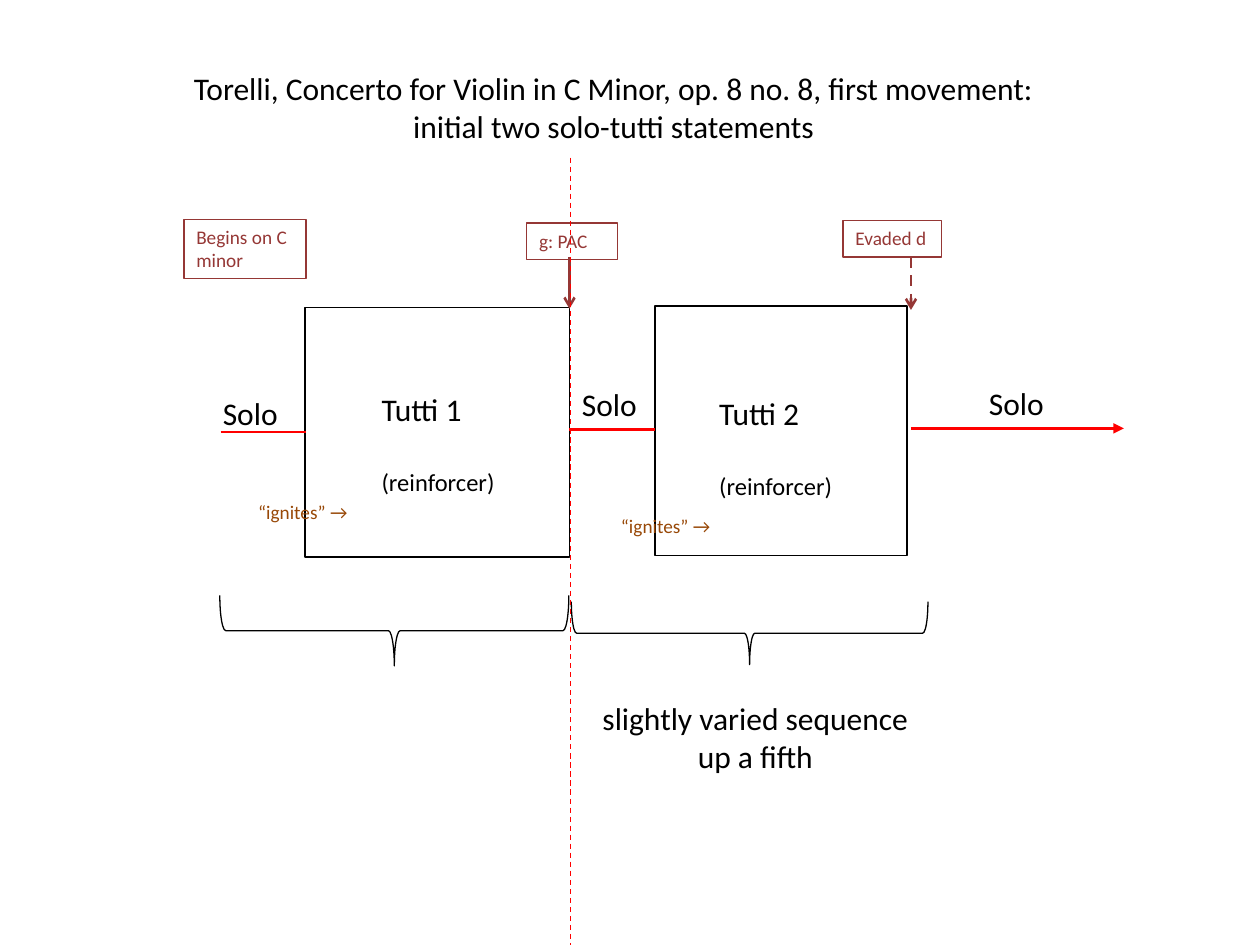
from typing import NamedTuple, Optional

from lxml import etree
from pptx import Presentation
from pptx.dml.color import RGBColor
from pptx.enum.dml import MSO_LINE
from pptx.enum.shapes import MSO_CONNECTOR, MSO_SHAPE
from pptx.enum.text import MSO_ANCHOR, MSO_AUTO_SIZE, PP_ALIGN
from pptx.oxml.ns import qn
from pptx.util import Inches, Pt

BLACK = RGBColor(0x00, 0x00, 0x00)
WHITE = RGBColor(0xFF, 0xFF, 0xFF)
RED = RGBColor(0xFF, 0x00, 0x00)
MAROON = RGBColor(0x95, 0x37, 0x35)
BROWN = RGBColor(0x98, 0x48, 0x07)

RECT, BRACE = MSO_SHAPE.RECTANGLE, MSO_SHAPE.LEFT_BRACE
STRAIGHT, DASH = MSO_CONNECTOR.STRAIGHT, MSO_LINE.DASH
LEFT, CENTER = PP_ALIGN.LEFT, PP_ALIGN.CENTER
TOP, FIT = MSO_ANCHOR.TOP, MSO_AUTO_SIZE.SHAPE_TO_FIT_TEXT

FONT = "Calibri"
BODY, SMALL, TAG = 18, 14, 11
GAP = Pt(22)  # one body line above "(reinforcer)"


class Area(NamedTuple):
    left: float
    top: float
    width: float
    height: float


class Row(NamedTuple):
    text: str
    size: int = BODY
    gap: int = 0


class Note(NamedTuple):
    area: Area
    rows: list[Row]
    color: RGBColor = BLACK
    align: PP_ALIGN = LEFT
    framed: bool = False


class Rule(NamedTuple):
    x1: float
    y1: float
    x2: float
    y2: float
    color: RGBColor = RED
    width: float = 1.5
    dashed: bool = False
    head: Optional[str] = None


def tutti(name: str) -> list[Row]:
    return [Row(name), Row("(reinforcer)", SMALL, GAP)]


def solo(left: float, top: float) -> Note:
    return Note(Area(left, top, 0.83, 0.4), [Row("Solo")])


def ignite(left: float, top: float) -> Note:
    return Note(Area(left, top, 0.98, 0.29), [Row("“ignites” →", TAG)], BROWN)


def label(text: str, area: Area) -> Note:
    return Note(area, [Row(text, TAG)], MAROON, framed=True)


def draw_shape(shapes, kind: MSO_SHAPE, area: Area, width: float,
               fill: Optional[RGBColor] = None, turn: int = 0) -> None:
    shape = shapes.add_shape(kind, *map(Inches, area))
    shape.shadow.inherit = False
    shape.rotation = turn
    if fill is None:
        shape.fill.background()
    else:
        shape.fill.solid()
        shape.fill.fore_color.rgb = fill
    shape.line.color.rgb = BLACK
    shape.line.width = Pt(width)


def draw_note(shapes, note: Note) -> None:
    box = shapes.add_textbox(*map(Inches, note.area))
    if note.framed:
        box.line.color.rgb = note.color
        box.line.width = Pt(0.75)
    frame = box.text_frame
    frame.word_wrap = True
    frame.auto_size = FIT
    frame.vertical_anchor = TOP
    for i, row in enumerate(note.rows):
        para = frame.add_paragraph() if i else frame.paragraphs[0]
        para.alignment = note.align
        para.space_before = row.gap
        run = para.add_run()
        run.text = row.text
        run.font.name = FONT
        run.font.size = Pt(row.size)
        run.font.color.rgb = note.color


def draw_rule(shapes, rule: Rule) -> None:
    line = shapes.add_connector(STRAIGHT, *map(Inches, rule[:4]))
    line.line.color.rgb = rule.color
    line.line.width = Pt(rule.width)
    if rule.dashed:
        line.line.dash_style = DASH
    props = line._element.spPr
    if rule.head:
        etree.SubElement(props.get_or_add_ln(), qn("a:tailEnd"), type=rule.head)
    etree.SubElement(props, qn("a:effectLst"))


BOXES = [Area(2.42, 2.44, 2.1, 1.98), Area(5.2, 2.43, 2, 1.98)]
# Frames before the quarter turn
BRACES = [Area(2.85, 3.62, 0.56, 2.77), Area(5.7, 3.61, 0.5, 2.83)]

NOTES = [
    Note(Area(2.93, 3.05, 1.41, 0.94), tutti("Tutti 1")),
    Note(Area(5.61, 3.08, 1.19, 0.94), tutti("Tutti 2")),
    label("g: PAC", Area(4.18, 1.77, 0.72, 0.29)),
    label("Evaded d", Area(6.69, 1.75, 0.78, 0.29)),
    label("Begins on C minor", Area(1.46, 1.74, 0.97, 0.47)),
    solo(1.67, 3.08),
    solo(4.52, 3.01),
    solo(7.75, 3),
    ignite(1.95, 3.92),
    ignite(4.83, 4.03),
    Note(Area(4.53, 5.5, 2.93, 0.71),
         [Row("slightly varied sequence"), Row("up a fifth")], align=CENTER),
    Note(Area(1.33, 0.5, 7.08, 0.71),
         [Row("Torelli, Concerto for Violin in C Minor, op. 8 no. 8, first movement:"),
          Row("initial two solo-tutti statements")], align=CENTER),
]

RULES = [
    # Cadence arrows
    Rule(4.52, 2.04, 4.52, 2.45, MAROON, head="arrow"),
    Rule(7.23, 2.04, 7.23, 2.46, MAROON, dashed=True, head="arrow"),
    # Solo lines
    Rule(1.75, 3.43, 2.43, 3.43),
    Rule(4.52, 3.41, 5.2, 3.41),
    Rule(7.23, 3.4, 8.92, 3.4, head="triangle"),
    # Divider between the two statements
    Rule(4.53, 1.25, 4.53, 7.5, width=0.75, dashed=True),
]


def main() -> None:
    deck = Presentation()
    deck.slide_width, deck.slide_height = Inches(10), Inches(7.5)
    shapes = deck.slides.add_slide(deck.slide_layouts[6]).shapes

    for area in BOXES:
        draw_shape(shapes, RECT, area, 1, WHITE)
    for area in BRACES:
        draw_shape(shapes, BRACE, area, 0.75, turn=270)
    for note in NOTES:
        draw_note(shapes, note)
    for rule in RULES:
        draw_rule(shapes, rule)

    deck.save("out.pptx")


if __name__ == "__main__":
    main()
